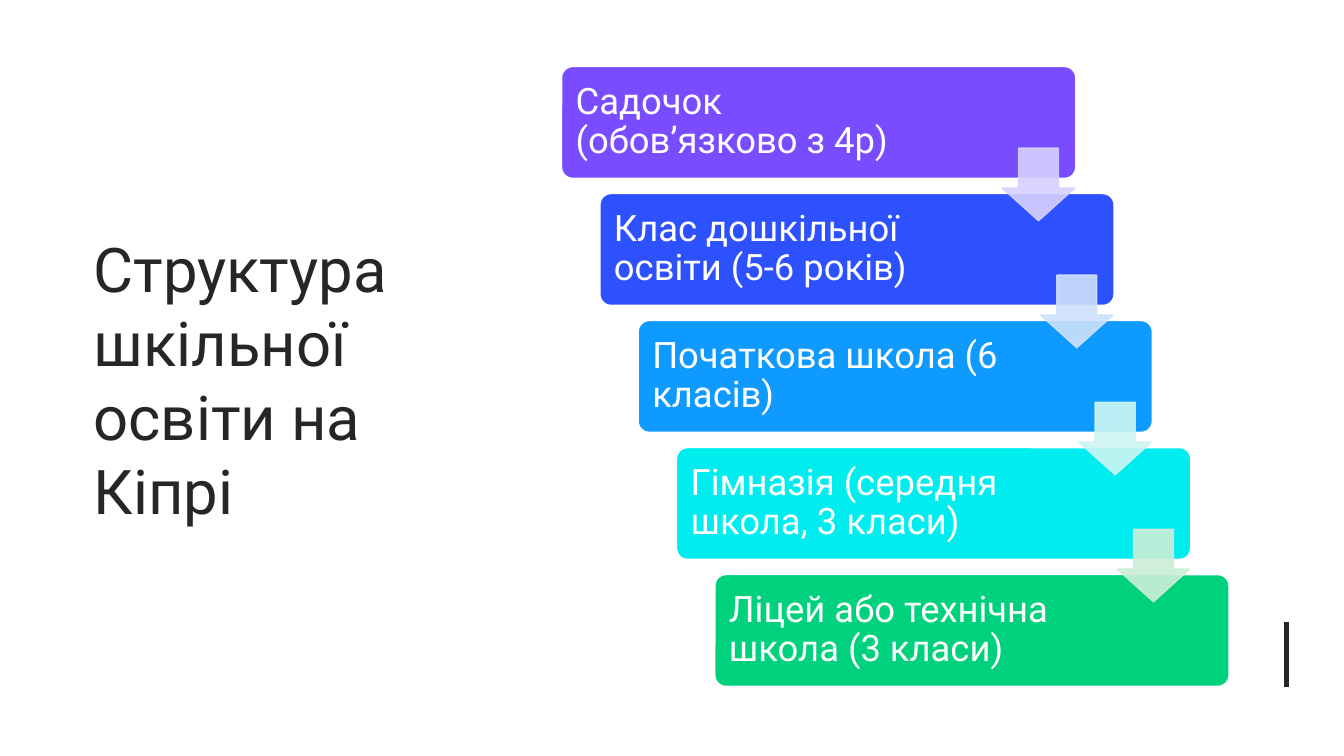
"""Build a slide with the stages of school education in Cyprus."""
from dataclasses import dataclass

from lxml import etree
from pptx import Presentation
from pptx.dml import color
from pptx.enum import shapes, text
from pptx.oxml import ns
from pptx.util import Inches, Pt

COLORS = {
    "ink": "262626", "white": "FFFFFF",
    "violet": "794DFF", "blue": "2E51FF", "azure": "0F9AFF", "cyan": "00EDF0", "green": "00D17D",
    "pale_violet": "D7D0FF", "pale_blue": "CDE2FB", "pale_cyan": "CCF5F2", "pale_green": "CBEED7",
}
STEP_X, STEP_Y = 0.38, 1.26
ARROW_ALPHA = 90


@dataclass(frozen=True)
class Box:
    left: float
    top: float
    width: float
    height: float

    def shifted(self, count: int) -> "Box":
        return Box(self.left + count * STEP_X, self.top + count * STEP_Y, self.width, self.height)

    def lengths(self) -> list:
        return [Inches(side) for side in (self.left, self.top, self.width, self.height)]


@dataclass(frozen=True)
class Stage:
    label: str
    fill: str
    arrow: str = ""
    label_width: float = 3.93


STAGES = [
    Stage("Садочок (обов’язково з 4р)", "violet", "pale_violet", 3.77),
    Stage("Клас дошкільної освіти (5-6 років)", "blue", "pale_blue"),
    Stage("Початкова школа (6 класів)", "azure", "pale_cyan"),
    Stage("Гімназія (середня школа, 3 класи)", "cyan", "pale_green"),
    Stage("Ліцей або технічна школа (3 класи)", "green"),
]
TITLE = Box(0.83, 0.94, 3.77, 5.64)
CARD = Box(5.57, 0.66, 5.1, 1.11)
ARROW = Box(9.94, 1.47, 0.72, 0.72)


def rgb(name: str) -> color.RGBColor:
    return color.RGBColor.from_string(COLORS[name])


def apply(target, formats: dict) -> None:
    for name, value in formats.items():
        setattr(target, name, value)


def add_label(slide, box: Box, wording: str, size: int, ink: str, inset: float, paragraph_format: dict) -> None:
    frame = slide.shapes.add_textbox(*box.lengths()).text_frame
    apply(frame, {
        "word_wrap": True, "vertical_anchor": text.MSO_ANCHOR.MIDDLE,
        "margin_left": Inches(inset), "margin_right": Inches(inset),
        "margin_top": Inches(inset), "margin_bottom": Inches(inset),
    })
    paragraph = frame.paragraphs[0]
    apply(paragraph, paragraph_format)
    run = paragraph.add_run()
    run.text = wording
    apply(run.font, {"name": "Roboto", "size": Pt(size)})
    run.font.color.rgb = rgb(ink)


def add_figure(slide, kind, box: Box, adjustments: list, fill: str, outline: str, alpha: int = 100) -> None:
    figure = slide.shapes.add_shape(kind, *box.lengths())
    figure.shadow.inherit = False
    for index, value in enumerate(adjustments):
        figure.adjustments[index] = value
    figure.fill.solid()
    figure.fill.fore_color.rgb = rgb(fill)
    figure.line.color.rgb = rgb(outline)
    figure.line.width = Pt(1)
    if alpha < 100:
        for shade in figure.element.spPr.iter(ns.qn("a:srgbClr")):
            etree.SubElement(shade, ns.qn("a:alpha"), val=str(alpha * 1000))


def add_accent(slide) -> None:
    accent = slide.shapes.add_connector(
        shapes.MSO_CONNECTOR.STRAIGHT, Inches(12.76), Inches(6.17), Inches(12.76), Inches(6.82))
    accent.line.color.rgb = rgb("ink")
    accent.line.width = Pt(3)
    etree.SubElement(accent.element.spPr, ns.qn("a:effectLst"))


def main() -> None:
    deck = Presentation()
    apply(deck, {"slide_width": Inches(13.33), "slide_height": Inches(7.5)})
    slide = deck.slides.add_slide(deck.slide_layouts[6])
    add_label(slide, TITLE, "Структура шкільної освіти на Кіпрі", 44, "ink", 0.1, {})
    add_accent(slide)
    for position, stage in enumerate(STAGES):
        add_figure(slide, shapes.MSO_SHAPE.ROUNDED_RECTANGLE, CARD.shifted(position), [0.1], stage.fill, "white")
        label_box = Box(CARD.left + 0.03, CARD.top + 0.03, stage.label_width, 1.04).shifted(position)
        add_label(slide, label_box, stage.label, 26, "white", 0.11, {"line_spacing": 0.9})
    for position, stage in enumerate(STAGES[:-1]):
        add_figure(slide, shapes.MSO_SHAPE.DOWN_ARROW, ARROW.shifted(position), [0.55, 0.45],
                   stage.arrow, stage.arrow, ARROW_ALPHA)
    deck.save("out.pptx")


if __name__ == "__main__":
    main()
